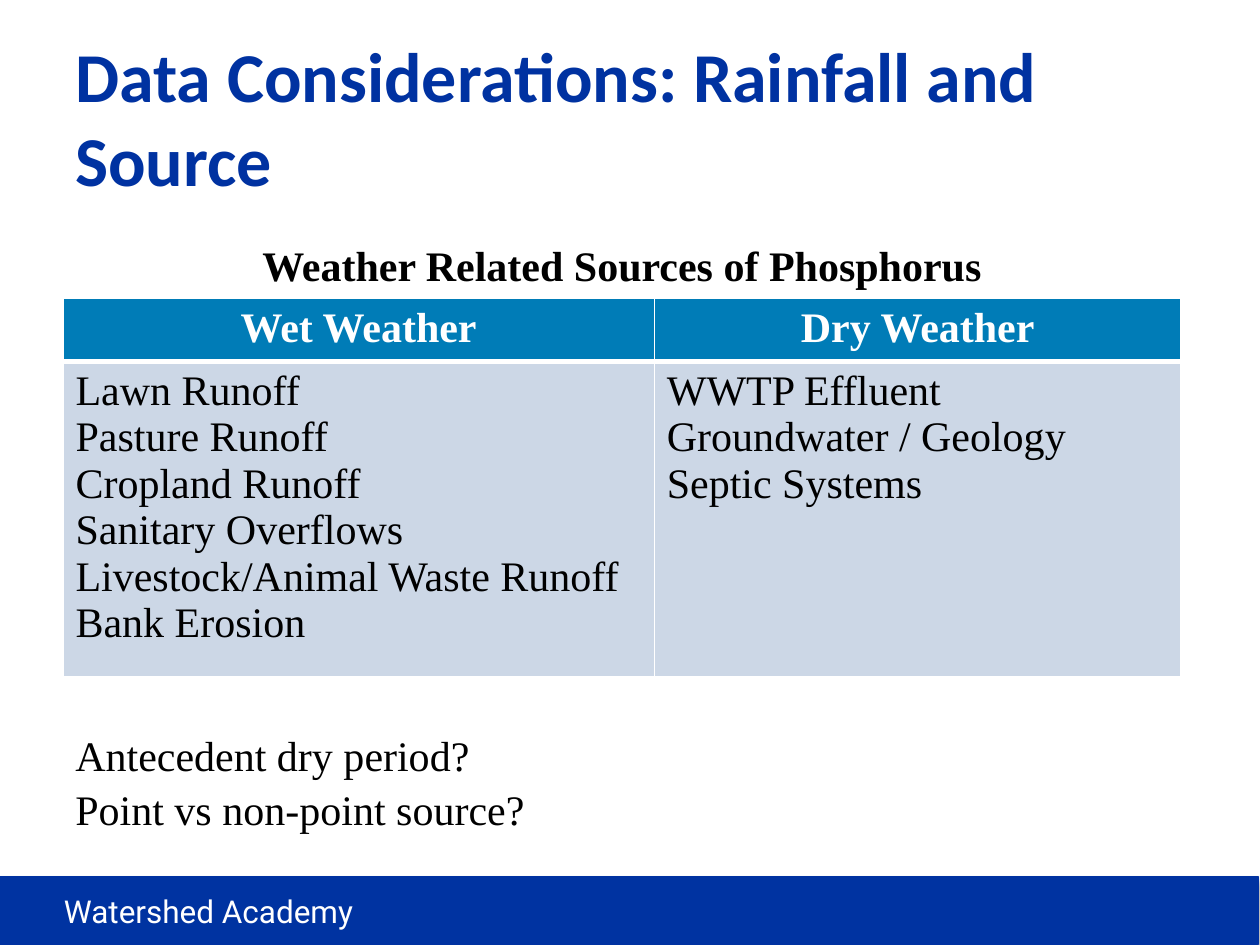
"""Build the slide on rainfall and phosphorus sources."""
from lxml.etree import SubElement
from pptx import Presentation
from pptx.dml.color import RGBColor
from pptx.enum.shapes import MSO_SHAPE
from pptx.enum.text import MSO_ANCHOR, PP_ALIGN
from pptx.oxml import parse_xml
from pptx.oxml.ns import nsdecls, qn
from pptx.util import Cm, Pt

BLUE = RGBColor(0x00, 0x32, 0xA1)
BAR_BLUE = RGBColor(0x00, 0x33, 0xA1)
HEADER_BLUE = RGBColor(0x00, 0x7C, 0xB7)
PALE_BLUE = RGBColor(0xCC, 0xD7, 0xE6)
WHITE = RGBColor(0xFF, 0xFF, 0xFF)
BLACK = RGBColor(0x00, 0x00, 0x00)

SERIF = "Times New Roman"
LEFT = Cm(1.27)
TABLE_WIDTH = Cm(22.54)
SOURCES = {
    "Wet Weather": [
        "Lawn Runoff",
        "Pasture Runoff",
        "Cropland Runoff",
        "Sanitary Overflows",
        "Livestock/Animal Waste Runoff",
        "Bank Erosion",
    ],
    "Dry Weather": ["WWTP Effluent", "Groundwater / Geology", "Septic Systems"],
}


def write_lines(frame, lines, font=SERIF, size=24, color=BLACK, bold=False,
                align=PP_ALIGN.LEFT, spacing=None):
    """Write each line as a formatted paragraph of a text frame."""
    for index, line in enumerate(lines):
        para = frame.add_paragraph() if index else frame.paragraphs[0]
        para.alignment = align
        para.line_spacing = spacing
        span = para.add_run()
        span.text = line
        span.font.name = font
        span.font.size = Pt(size)
        span.font.bold = bold
        span.font.color.rgb = color


def add_text(page, lines, left, top, width, height, anchor=MSO_ANCHOR.TOP, **style):
    """Add a wrapping text box."""
    frame = page.shapes.add_textbox(left, top, width, height).text_frame
    frame.word_wrap = True
    frame.vertical_anchor = anchor
    write_lines(frame, lines, **style)


def add_footer_bar(page):
    """Add the blue band with its soft shadow."""
    bar = page.shapes.add_shape(
        MSO_SHAPE.RECTANGLE, Cm(-0.03), Cm(17.68), Cm(25.4), Cm(1.35))
    bar.fill.solid()
    bar.fill.fore_color.rgb = BAR_BLUE
    bar.line.color.rgb = BLUE
    bar.line.width = Pt(0.75)
    bar._element.spPr.append(parse_xml(
        f'<a:effectLst {nsdecls("a")}>'
        f'<a:outerShdw blurRad="{Pt(3.1)}" dist="{Pt(1.8)}" dir="5400000">'
        '<a:srgbClr val="000000"><a:alpha val="35000"/></a:srgbClr>'
        '</a:outerShdw></a:effectLst>'))


def format_cell(cell, fill, top=1, bottom=1):
    """Give a cell white borders and a solid fill."""
    properties = cell._tc.get_or_add_tcPr()
    for side, width in (("L", 1), ("R", 1), ("T", top), ("B", bottom)):
        line = SubElement(properties, qn(f"a:ln{side}"), w=str(Pt(width)))
        solid = SubElement(line, qn("a:solidFill"))
        SubElement(solid, qn("a:srgbClr"), val=str(WHITE))
    cell.fill.solid()
    cell.fill.fore_color.rgb = fill


def add_source_table(page):
    """Add the table of sources by weather."""
    table = page.shapes.add_table(
        2, len(SOURCES), LEFT, Cm(6.02), TABLE_WIDTH, Cm(7.58)).table
    table.columns[0].width = Cm(11.92)
    table.columns[1].width = TABLE_WIDTH - Cm(11.92)
    table.rows[0].height = Cm(1.25)
    table.rows[1].height = Cm(6.33)
    for column, (heading, sources) in enumerate(SOURCES.items()):
        header, body = table.cell(0, column), table.cell(1, column)
        write_lines(header.text_frame, [heading], color=WHITE, bold=True,
                    align=PP_ALIGN.CENTER)
        write_lines(body.text_frame, sources)
        format_cell(header, HEADER_BLUE, bottom=3)
        format_cell(body, PALE_BLUE, top=3)


def main():
    """Build and save the deck."""
    deck = Presentation()
    deck.slide_width, deck.slide_height = Cm(25.4), Cm(19.05)
    page = deck.slides.add_slide(deck.slide_layouts[6])
    add_footer_bar(page)
    add_text(page, ["Watershed Academy"], Cm(1.04), Cm(17.86), Cm(8.53), Cm(1.04),
             font="Roboto", size=18, color=WHITE)
    add_text(page, ["Data Considerations: Rainfall and Source"],
             LEFT, Cm(0.76), Cm(22.86), Cm(3.18), anchor=MSO_ANCHOR.MIDDLE,
             font="Calibri", size=40, color=BLUE, bold=True)
    add_source_table(page)
    add_text(page, ["Weather Related Sources of Phosphorus"],
             LEFT, Cm(4.62), TABLE_WIDTH, Cm(1.27), bold=True,
             align=PP_ALIGN.CENTER, spacing=1.08)
    add_text(page, ["Antecedent dry period?", "Point vs non-point source?"],
             LEFT, Cm(14.5), TABLE_WIDTH, Cm(2.31), spacing=1.08)
    deck.save("out.pptx")


if __name__ == "__main__":
    main()
